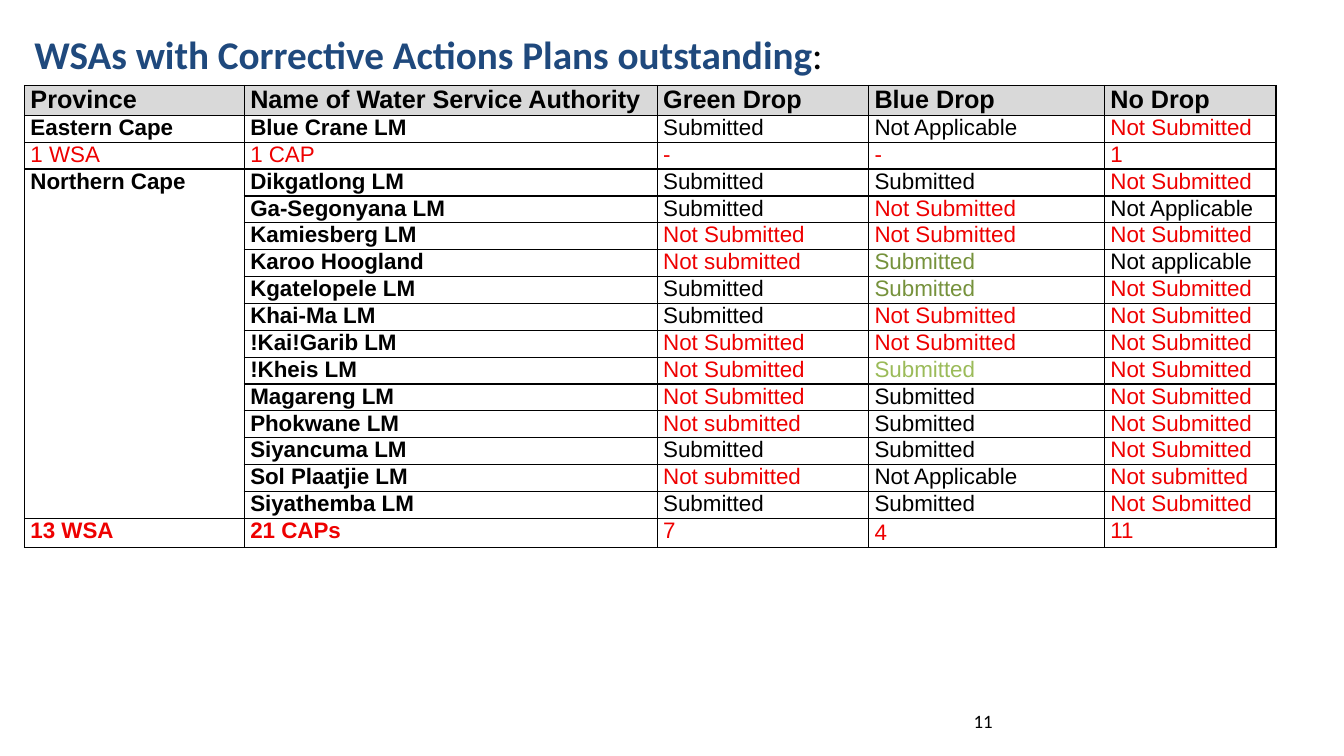
from dataclasses import dataclass

from lxml import etree
from pptx import Presentation
from pptx.dml.color import RGBColor
from pptx.enum import text
from pptx.oxml import ns
from pptx.util import Pt


@dataclass(frozen=True)
class Theme:
    ink: str = "000000"
    heading: str = "1F497D"
    header_fill: str = "D9D9D9"
    outstanding: str = "EE0000"
    olive: str = "76923C"
    lime: str = "9BBB59"
    heading_size: float = 28
    header_size: float = 18
    body_size: float = 16
    number_size: float = 13.5
    heading_font: str = "Calibri"
    table_font: str = "Arial"


theme = Theme()


def style(font, name, size, color, bold=False):
    font.name, font.size, font.bold = name, Pt(size), bold
    font.color.rgb = RGBColor.from_string(color)


def outline(cell):
    for side in ("lnL", "lnR", "lnT", "lnB"):
        line = etree.SubElement(cell._tc.get_or_add_tcPr(), ns.qn(f"a:{side}"), w=str(Pt(1)))
        paint = etree.SubElement(line, ns.qn("a:solidFill"))
        etree.SubElement(paint, ns.qn("a:srgbClr"), val=theme.ink)


records = [
    ("Province", "Name of Water Service Authority", "Green Drop", "Blue Drop", "No Drop"),
    ("Eastern Cape", "Blue Crane LM", "Submitted", "Not Applicable", "Not Submitted"),
    ("1 WSA", "1 CAP", "-", "-", "1"),
    ("Northern Cape", "Dikgatlong LM", "Submitted", "Submitted", "Not Submitted"),
    ("", "Ga-Segonyana LM", "Submitted", "Not Submitted", "Not Applicable"),
    ("", "Kamiesberg LM", "Not Submitted", "Not Submitted", "Not Submitted"),
    ("", "Karoo Hoogland", "Not submitted", "Submitted", "Not applicable"),
    ("", "Kgatelopele LM", "Submitted", "Submitted", "Not Submitted"),
    ("", "Khai-Ma LM", "Submitted", "Not Submitted", "Not Submitted"),
    ("", "!Kai!Garib LM", "Not Submitted", "Not Submitted", "Not Submitted"),
    ("", "!Kheis LM", "Not Submitted", "Submitted", "Not Submitted"),
    ("", "Magareng LM", "Not Submitted", "Submitted", "Not Submitted"),
    ("", "Phokwane LM", "Not submitted", "Submitted", "Not Submitted"),
    ("", "Siyancuma LM", "Submitted", "Submitted", "Not Submitted"),
    ("", "Sol Plaatjie LM", "Not submitted", "Not Applicable", "Not submitted"),
    ("", "Siyathemba LM", "Submitted", "Submitted", "Not Submitted"),
    ("13 WSA", "21 CAPs", "7", "4", "11"),
]
header, eastern_total, northern_first, northern_total = 0, 2, 3, len(records) - 1
late_submissions = {
    ("Karoo Hoogland", 3): theme.olive,
    ("Kgatelopele LM", 3): theme.olive,
    ("!Kheis LM", 3): theme.lime,
}

prs = Presentation()
prs.slide_width, prs.slide_height = Pt(960), Pt(540)
slide = prs.slides.add_slide(prs.slide_layouts[5])

heading = slide.shapes.title
heading.left, heading.top, heading.width, heading.height = Pt(17.3), Pt(18), Pt(745), Pt(41)
heading.text_frame.vertical_anchor = text.MSO_ANCHOR.TOP
heading_line = heading.text_frame.paragraphs[0]
heading_line.alignment = text.PP_ALIGN.LEFT
for words, color, bold in (
    ("WSAs with Corrective Actions Plans outstanding", theme.heading, True),
    (":", theme.ink, False),
):
    run = heading_line.add_run()
    run.text = words
    style(run.font, theme.heading_font, theme.heading_size, color, bold)

column_widths = [157, 295, 151, 168.5, 122.5]
row_heights = [21.4] + [19.2] * (len(records) - 2) + [20.7]
caps = slide.shapes.add_table(
    len(records), len(column_widths), Pt(17.5), Pt(61), Pt(sum(column_widths)), Pt(sum(row_heights))
).table
for column, width in zip(caps.columns, column_widths):
    column.width = Pt(width)
for row, height in zip(caps.rows, row_heights):
    row.height = Pt(height)

for r, record in enumerate(records):
    is_total = r in (eastern_total, northern_total)
    for c, entry in enumerate(record):
        cell = caps.cell(r, c)
        cell.margin_left = cell.margin_right = Pt(4.3)
        cell.margin_top = cell.margin_bottom = 0
        outline(cell)
        if r == header:
            cell.fill.solid()
            cell.fill.fore_color.rgb = RGBColor.from_string(theme.header_fill)
        else:
            cell.fill.background()
        cell.text = entry
        missing = is_total or entry.lower() == "not submitted"
        color = late_submissions.get((record[1], c), theme.outstanding if missing else theme.ink)
        bold = r == header or (c < 2 and r != eastern_total)
        size = theme.header_size if r == header else theme.body_size
        style(cell.text_frame.paragraphs[0].font, theme.table_font, size, color, bold)
caps.cell(northern_total, 3).text_frame.paragraphs[0].line_spacing = 1.07
caps.cell(northern_first, 0).merge(caps.cell(northern_total - 1, 0))

page = slide.shapes.add_textbox(Pt(688.3), Pt(500.4), Pt(224), Pt(28.8)).text_frame
page.word_wrap = True
page.vertical_anchor = text.MSO_ANCHOR.MIDDLE
page.text = "11"
style(page.paragraphs[0].font, theme.heading_font, theme.number_size, theme.ink)

prs.save("out.pptx")
